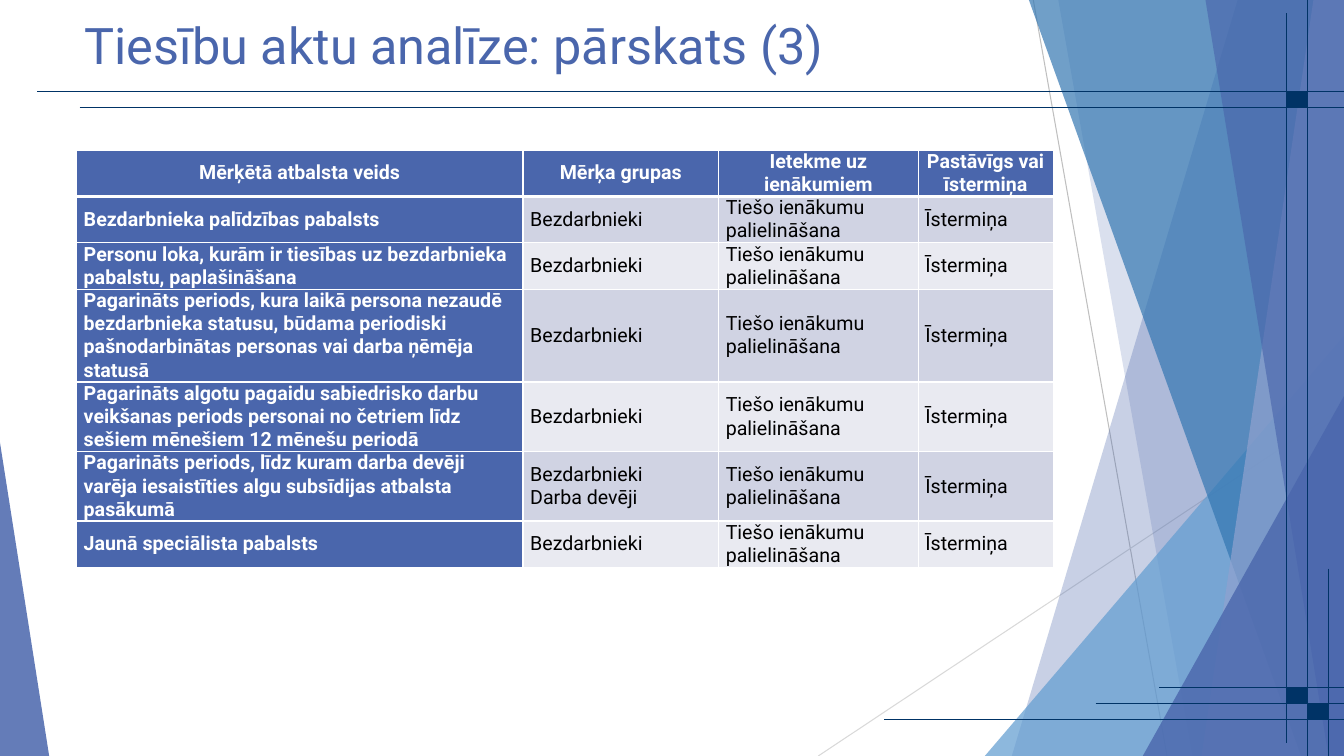
from lxml import etree
from pptx import Presentation
from pptx import util as u
from pptx.dml import color
from pptx.enum import shapes, text
from pptx.oxml import ns

COLORS = {"blue": "4A66AC", "sky": "629DD1", "teal": "3477B2", "pale": "90A2CF",
          "navy": "003366", "silver": "BFBFBF", "mist": "D9D9D9",
          "white": "FFFFFF", "black": "000000", "odd": "D0D3E3", "even": "E9EAF1"}
FONT = "Roboto"
WIDE, HIGH = 33.87, 19.05
LINE = 0.58

HEAD = ["Mērķētā atbalsta veids", "Mērķa grupas",
        "Ietekme uz ienākumiem", "Pastāvīgs vai īstermiņa"]
GROUP, EFFECT, TERM = "Bezdarbnieki", "Tiešo ienākumu palielināšana", "Īstermiņa"
AIDS = [
    ("Bezdarbnieka palīdzības pabalsts", GROUP, 2),
    ("Personu loka, kurām ir tiesības uz bezdarbnieka pabalstu, paplašināšana", GROUP, 2),
    ("Pagarināts periods, kura laikā persona nezaudē bezdarbnieka statusu, būdama "
     "periodiski pašnodarbinātas personas vai darba ņēmēja statusā", GROUP, 4),
    ("Pagarināts algotu pagaidu sabiedrisko darbu veikšanas periods personai no "
     "četriem līdz sešiem mēnešiem 12 mēnešu periodā", GROUP, 3),
    ("Pagarināts periods, līdz kuram darba devēji varēja iesaistīties algu "
     "subsīdijas atbalsta pasākumā", GROUP + "\nDarba devēji", 3),
    ("Jaunā speciālista pabalsts", GROUP, 2),
]
COLS = [11.25, 4.93, 5.03, 3.4]


def rgb(name):
    return color.RGBColor.from_string(COLORS[name])


def style(frame, size, hue, bold=False, align=text.PP_ALIGN.LEFT):
    for para in frame.paragraphs:
        para.alignment = align
        for run in para.runs:
            run.font.name = FONT
            run.font.size = u.Pt(size)
            run.font.bold = bold
            run.font.color.rgb = rgb(hue)


def paint(shape, hue, alpha=100):
    shape.shadow.inherit = False
    shape.fill.solid()
    shape.fill.fore_color.rgb = rgb(hue)
    shape.line.fill.background()
    if alpha < 100:
        tint = shape._element.spPr.find(".//" + ns.qn("a:srgbClr"))
        etree.SubElement(tint, ns.qn("a:alpha"), val=str(alpha * 1000))


def add_line(slide, x1, y1, x2, y2, hue="navy"):
    line = slide.shapes.add_connector(shapes.MSO_CONNECTOR.STRAIGHT,
                                      u.Cm(x1), u.Cm(y1), u.Cm(x2), u.Cm(y2))
    line.line.color.rgb = rgb(hue)
    line.line.width = u.Pt(0.75)
    etree.SubElement(line._element.spPr, ns.qn("a:effectLst"))


def add_wedge(slide, top, base, hue, alpha):
    form = slide.shapes.build_freeform(u.Cm(top), 0)
    form.add_line_segments([(u.Cm(WIDE), 0), (u.Cm(WIDE), u.Cm(HIGH)),
                            (u.Cm(base), u.Cm(HIGH))])
    paint(form.convert_to_shape(), hue, alpha)


def add_peak(slide, left, top, width, apex, hue, alpha):
    peak = slide.shapes.add_shape(shapes.MSO_SHAPE.ISOSCELES_TRIANGLE, u.Cm(left),
                                  u.Cm(top), u.Cm(width), u.Cm(HIGH - top))
    peak.adjustments[0] = apex
    paint(peak, hue, alpha)


def add_block(slide, left, top):
    block = slide.shapes.add_shape(shapes.MSO_SHAPE.RECTANGLE,
                                   u.Cm(left), u.Cm(top), u.Cm(0.53), u.Cm(0.41))
    paint(block, "navy")
    block.line.color.rgb = rgb("navy")
    block.line.width = u.Pt(0.75)


def add_facets(slide):
    add_line(slide, 26.04, 0, 29.41, HIGH, "silver")
    add_line(slide, WIDE, 10.24, 20.62, HIGH, "mist")
    add_wedge(slide, 31.19, 25.5, "blue", 30)
    add_wedge(slide, 26.67, 30.05, "blue", 20)
    add_peak(slide, 24.82, 8.46, 9.05, 1, "sky", 72)
    add_wedge(slide, 25.93, 32.79, "teal", 70)
    add_wedge(slide, 33.1, 30.28, "pale", 70)
    add_wedge(slide, 30.38, 33.48, "blue", 65)
    add_peak(slide, 28.8, 9.98, 5.07, 1, "blue", 80)
    add_peak(slide, 0, 11.15, 1.24, 0, "blue", 85)


def add_rules(slide):
    for left, y in [(0.94, 2.31), (2.01, 2.72), (29.21, 17.32),
                    (27.61, 17.73), (22.28, 18.14)]:
        add_line(slide, left, y, WIDE, y)
    for x, top, base in [(32.94, 0, HIGH), (32.41, 0.33, 18.72), (33.48, 14.33, HIGH)]:
        add_line(slide, x, top, x, base)
    for left, top in [(32.41, 2.31), (32.41, 17.32), (32.94, 17.73)]:
        add_block(slide, left, top)


def set_title(slide, words):
    title = slide.shapes.title
    title.left, title.top = u.Cm(1.88), u.Cm(0.1)
    title.width, title.height = u.Cm(23.88), u.Cm(2.21)
    frame = title.text_frame
    frame.text = words
    frame.vertical_anchor = text.MSO_ANCHOR.MIDDLE
    frame.paragraphs[0].line_spacing = 0.9
    style(frame, 36, "blue")
    slide.shapes._spTree.append(title._element)


def set_cell(cell, words, fill, hue, bold, align, base):
    cell.text_frame.text = words
    cell.vertical_anchor = text.MSO_ANCHOR.MIDDLE
    cell.margin_left = cell.margin_right = u.Cm(0.18)
    cell.margin_top = cell.margin_bottom = 0
    style(cell.text_frame, 14, hue, bold, align)
    props = cell._tc.get_or_add_tcPr()
    for side, width in [("L", 1), ("R", 1), ("T", 1), ("B", base)]:
        edge = etree.SubElement(props, ns.qn("a:ln" + side), w=str(u.Pt(width)))
        solid = etree.SubElement(edge, ns.qn("a:solidFill"))
        etree.SubElement(solid, ns.qn("a:srgbClr"), val=COLORS["white"])
    cell.fill.solid()
    cell.fill.fore_color.rgb = rgb(fill)


def add_grid(slide):
    rows = [HEAD] + [[aid, group, EFFECT, TERM] for aid, group, _ in AIDS]
    lines = [2] + [count for _, _, count in AIDS]
    grid = slide.shapes.add_table(len(rows), len(COLS), u.Cm(1.93), u.Cm(3.78),
                                  u.Cm(sum(COLS)), u.Cm(LINE * sum(lines))).table
    for col, width in zip(grid.columns, COLS):
        col.width = u.Cm(width)
    for r, row in enumerate(rows):
        grid.rows[r].height = u.Cm(LINE * lines[r])
        for c, words in enumerate(row):
            bold = r == 0 or c == 0
            fill = "blue" if bold else "odd" if r % 2 else "even"
            align = text.PP_ALIGN.LEFT if r else text.PP_ALIGN.CENTER
            set_cell(grid.cell(r, c), words, fill, "white" if bold else "black",
                     bold, align, 1 if r else 3)


def main():
    deck = Presentation()
    deck.slide_width, deck.slide_height = u.Cm(WIDE), u.Cm(HIGH)
    slide = deck.slides.add_slide(deck.slide_layouts[5])
    add_facets(slide)
    add_rules(slide)
    set_title(slide, "Tiesību aktu analīze: pārskats (3)")
    add_grid(slide)
    deck.save("out.pptx")


if __name__ == "__main__":
    main()
